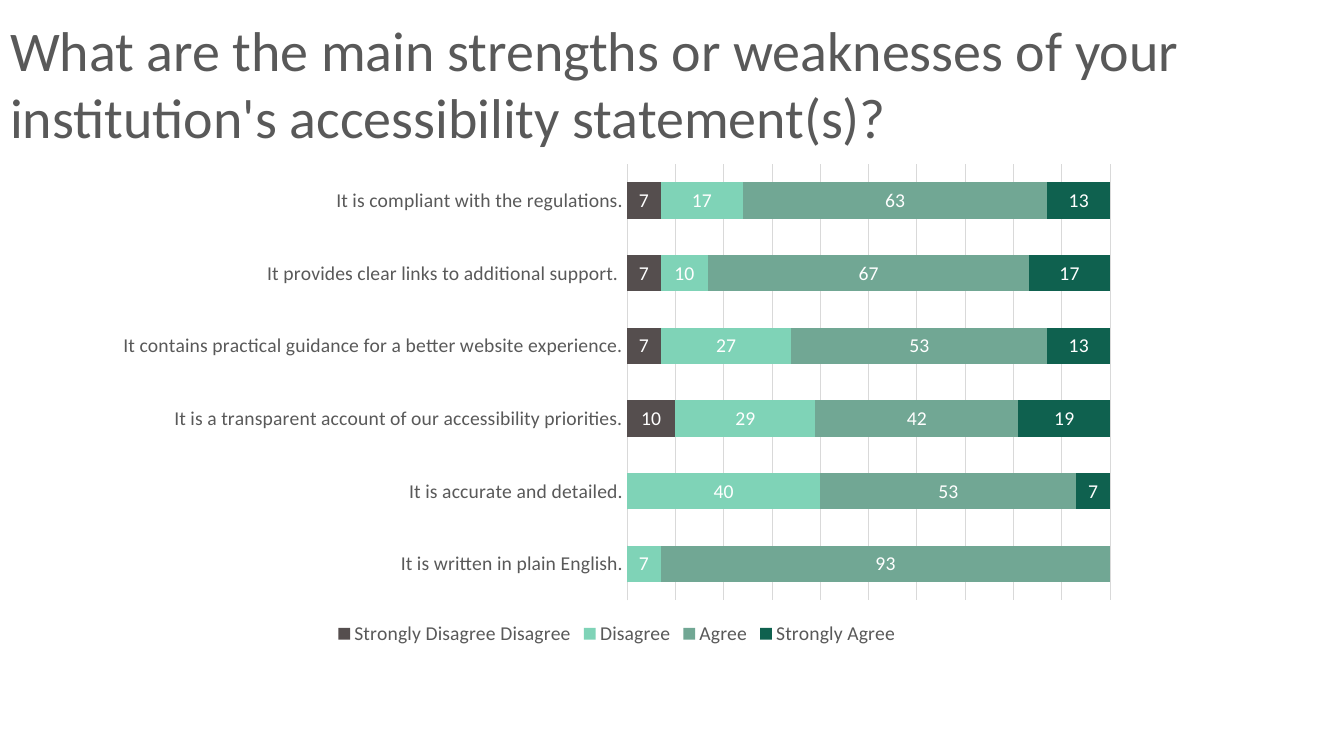
from lxml.etree import SubElement
from pptx import Presentation
from pptx.chart.data import CategoryChartData
from pptx.dml.color import RGBColor
from pptx.enum.chart import (XL_CHART_TYPE, XL_LABEL_POSITION,
                             XL_LEGEND_POSITION, XL_TICK_LABEL_POSITION,
                             XL_TICK_MARK)
from pptx.enum.text import MSO_ANCHOR, PP_ALIGN
from pptx.oxml.ns import qn
from pptx.util import Pt

EMU_PER_PX = 9525
FONT = "Calibri"
GREY_TEXT = "595959"
GRID_GREY = "D9D9D9"
WHITE = "FFFFFF"

QUESTION = ("What are the main strengths or weaknesses of your "
            "institution's accessibility statement(s)?")

STATEMENTS = [
    "It is written in plain English.",
    "It is accurate and detailed.",
    "It is a transparent account of our accessibility priorities.",
    "It contains practical guidance for a better website experience.",
    "It provides clear links to additional support. ",
    "It is compliant with the regulations.",
]

# Answer, colour, percentage for each statement
ANSWERS = [
    ("Strongly Disagree Disagree", "554E4E", (0, 0, 10, 7, 7, 7)),
    ("Disagree", "7FD3B7", (7, 40, 29, 27, 10, 17)),
    ("Agree", "71A794", (93, 53, 42, 53, 67, 63)),
    ("Strongly Agree", "0F614F", (0, 7, 19, 13, 17, 13)),
]


def px(length):
    return length * EMU_PER_PX


def colour(hex_code):
    return RGBColor.from_string(hex_code)


def set_font(font, size, hex_code):
    font.name = FONT
    font.size = Pt(size)
    font.color.rgb = colour(hex_code)


def set_line(line):
    line.color.rgb = colour(GRID_GREY)
    line.width = Pt(0.75)


def place_question(slide, left, top, width, height):
    title = slide.shapes.title
    title.left, title.top = px(left), px(top)
    title.width, title.height = px(width), px(height)
    frame = title.text_frame
    frame.word_wrap = True
    frame.vertical_anchor = MSO_ANCHOR.MIDDLE
    paragraph = frame.paragraphs[0]
    paragraph.alignment = PP_ALIGN.LEFT
    run = paragraph.add_run()
    run.text = QUESTION
    set_font(run.font, 40, GREY_TEXT)


def set_plot_box(chart, **fractions):
    """Fix the inner plot area as fractions of the chart box."""
    plot_area = chart.plots[0]._element.getparent()
    for old_layout in plot_area.findall(qn("c:layout")):
        plot_area.remove(old_layout)
    layout = SubElement(plot_area, qn("c:layout"))
    plot_area.insert(0, layout)
    manual = SubElement(layout, qn("c:manualLayout"))
    settings = {"layoutTarget": "inner", "xMode": "edge", "yMode": "edge",
                **fractions}
    for tag, value in settings.items():
        SubElement(manual, qn(f"c:{tag}")).set("val", str(value))


def place_answers(slide, left, top, width, height):
    data = CategoryChartData(number_format="0")
    data.categories = STATEMENTS
    for answer, _, percentages in ANSWERS:
        data.add_series(answer, percentages)
    chart = slide.shapes.add_chart(
        XL_CHART_TYPE.BAR_STACKED_100,
        px(left), px(top), px(width), px(height), data).chart
    set_font(chart.font, 14, GREY_TEXT)
    chart.has_title = False

    # Bars and their values; zero values stay unlabelled
    plot = chart.plots[0]
    plot.gap_width = 100
    plot.overlap = 100
    plot.vary_by_categories = False
    for series, (_, fill, _) in zip(plot.series, ANSWERS):
        series.format.fill.solid()
        series.format.fill.fore_color.rgb = colour(fill)
        labels = series.data_labels
        labels.show_value = True
        labels.number_format = "0;;;"
        labels.number_format_is_linked = False
        labels.position = XL_LABEL_POSITION.CENTER
        set_font(labels.font, 14, WHITE)

    # Axes
    statements = chart.category_axis
    statements.major_tick_mark = XL_TICK_MARK.NONE
    statements.minor_tick_mark = XL_TICK_MARK.NONE
    statements.tick_label_position = XL_TICK_LABEL_POSITION.NEXT_TO_AXIS
    set_font(statements.tick_labels.font, 14, GREY_TEXT)
    set_line(statements.format.line)
    shares = chart.value_axis
    shares.visible = False
    shares.minimum_scale, shares.maximum_scale = 0, 1
    shares.major_unit = 0.1
    shares.has_major_gridlines = True
    set_line(shares.major_gridlines.format.line)

    # Legend
    chart.has_legend = True
    chart.legend.position = XL_LEGEND_POSITION.BOTTOM
    chart.legend.include_in_layout = False
    set_font(chart.legend.font, 14, GREY_TEXT)
    set_plot_box(chart, x=0.51, y=0.02, w=0.47, h=0.88)


def main():
    deck = Presentation()
    deck.slide_width, deck.slide_height = px(1280), px(720)
    slide = deck.slides.add_slide(deck.slide_layouts.get_by_name("Title Only"))
    place_question(slide, 0, 9, 1280, 139)
    place_answers(slide, 98, 147, 979, 472)
    deck.save("out.pptx")


if __name__ == "__main__":
    main()
